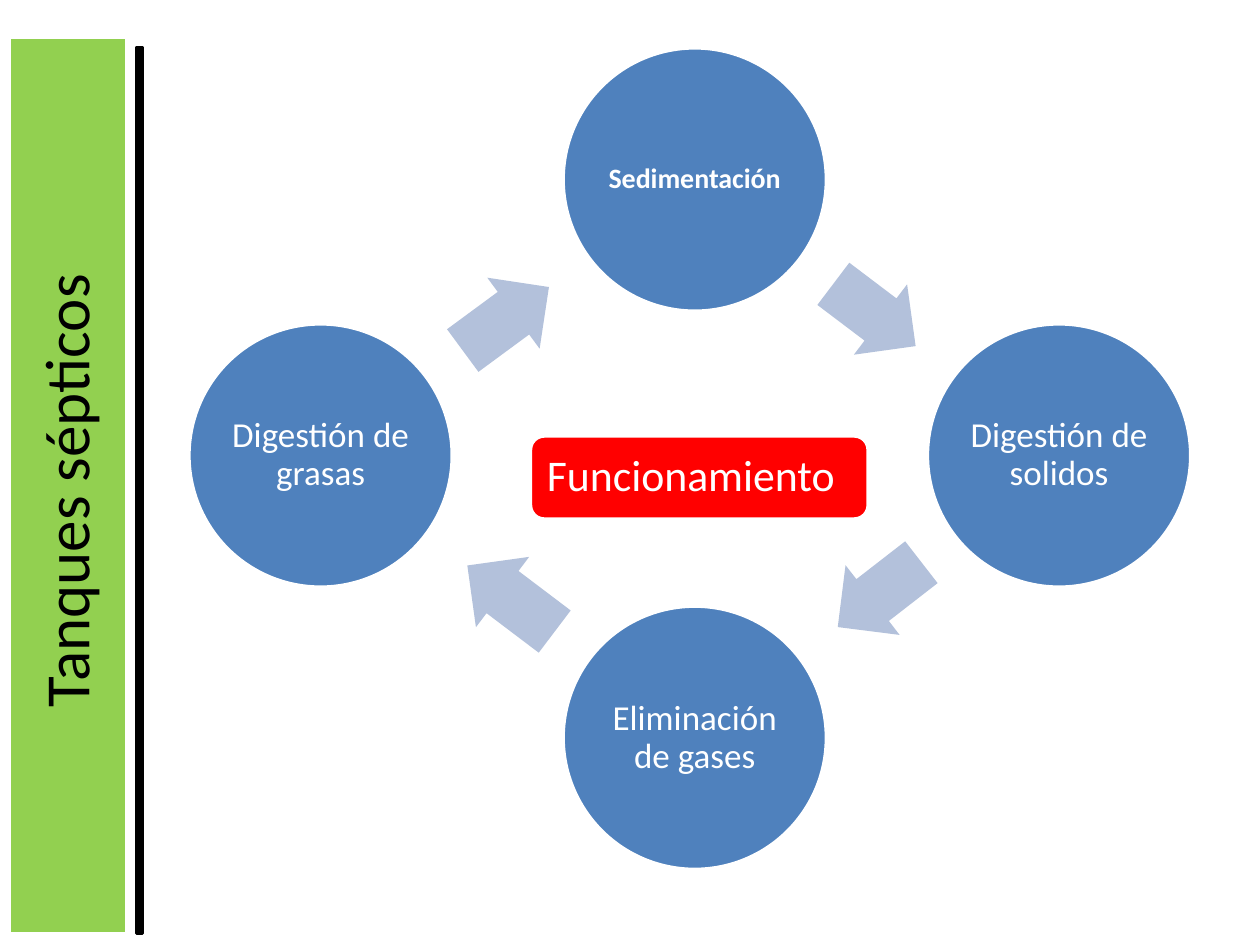
from dataclasses import dataclass
from pptx import Presentation
from pptx.dml.color import RGBColor
from pptx.enum.shapes import MSO_SHAPE
from pptx.enum.text import MSO_ANCHOR, PP_ALIGN
from pptx.util import Pt


@dataclass(frozen=True)
class Theme:
    font: str = "Calibri"
    white: str = "FFFFFF"
    black: str = "000000"
    green: str = "92D050"
    blue: str = "4F81BD"
    pale: str = "B3C1DB"
    red: str = "FF0000"
    title: int = 36
    label: int = 25
    step: int = 20
    small: int = 16


theme = Theme()
deck = Presentation()
deck.slide_width, deck.slide_height = Pt(720), Pt(540)
slide = deck.slides.add_slide(deck.slide_layouts[6])


def draw(kind, x, y, w, h, fill, line=None):
    """Add a preset shape centred on x, y."""
    shape = slide.shapes.add_shape(kind, Pt(x - w / 2), Pt(y - h / 2), Pt(w), Pt(h))
    shape.shadow.inherit = False
    shape.fill.solid()
    shape.fill.fore_color.rgb = RGBColor.from_string(fill)
    if line:
        shape.line.color.rgb = RGBColor.from_string(line)
        shape.line.width = Pt(2)
    else:
        shape.line.fill.background()
    return shape


def write(shape, text, size, color=theme.white, bold=False, align=PP_ALIGN.CENTER,
          anchor=MSO_ANCHOR.MIDDLE, inset=2, space=0.9):
    frame = shape.text_frame
    frame.word_wrap = True
    frame.vertical_anchor = anchor
    frame.margin_left = frame.margin_right = Pt(inset)
    frame.margin_top = frame.margin_bottom = Pt(inset)
    para = frame.paragraphs[0]
    para.alignment, para.line_spacing = align, space
    run = para.add_run()
    run.text = text
    font = run.font
    font.name, font.size, font.bold = theme.font, Pt(size), bold
    font.color.rgb = RGBColor.from_string(color)


# Side banner
draw(MSO_SHAPE.RECTANGLE, 38.9, 277.5, 67.7, 512, theme.green, theme.white)
draw(MSO_SHAPE.RECTANGLE, 79.7, 280.5, 3.6, 506, theme.black, theme.black)
title = slide.shapes.add_textbox(Pt(-181.4), Pt(233.3), Pt(480.2), Pt(94.3))
title.rotation = 270
write(title, "Tanques sépticos", theme.title, color=theme.black,
      anchor=MSO_ANCHOR.TOP, inset=3.6, space=1.0)

# Cycle of steps, clockwise from the top
steps = [
    ("Sedimentación", 397, 102.6, theme.small, True),
    ("Digestión de solidos", 605.2, 260.3, theme.step, False),
    ("Eliminación de gases", 397, 421.6, theme.step, False),
    ("Digestión de grasas", 183.2, 260.3, theme.step, False),
]
for text, x, y, size, bold in steps:
    disc = draw(MSO_SHAPE.OVAL, x, y, 150.5, 150.5, theme.blue, theme.white)
    write(disc, text, size, bold=bold)

arrows = [
    (499.7, 180, 59, 37.1),
    (502.6, 339.8, 60.5, 142.2),
    (292, 342, 62.6, 217.1),
    (289.1, 182.2, 61.2, 323.6),
]
for x, y, width, angle in arrows:
    arrow = draw(MSO_SHAPE.RIGHT_ARROW, x, y, width, 50.4, theme.pale)
    arrow.adjustments[0], arrow.adjustments[1] = 0.6, 0.5
    arrow.rotation = angle

# Centre label
label = draw(MSO_SHAPE.ROUNDED_RECTANGLE, 399.6, 272.9, 193, 47.5, theme.red, theme.white)
write(label, "Funcionamiento", theme.label, align=PP_ALIGN.LEFT, inset=7.2)

deck.save("out.pptx")
